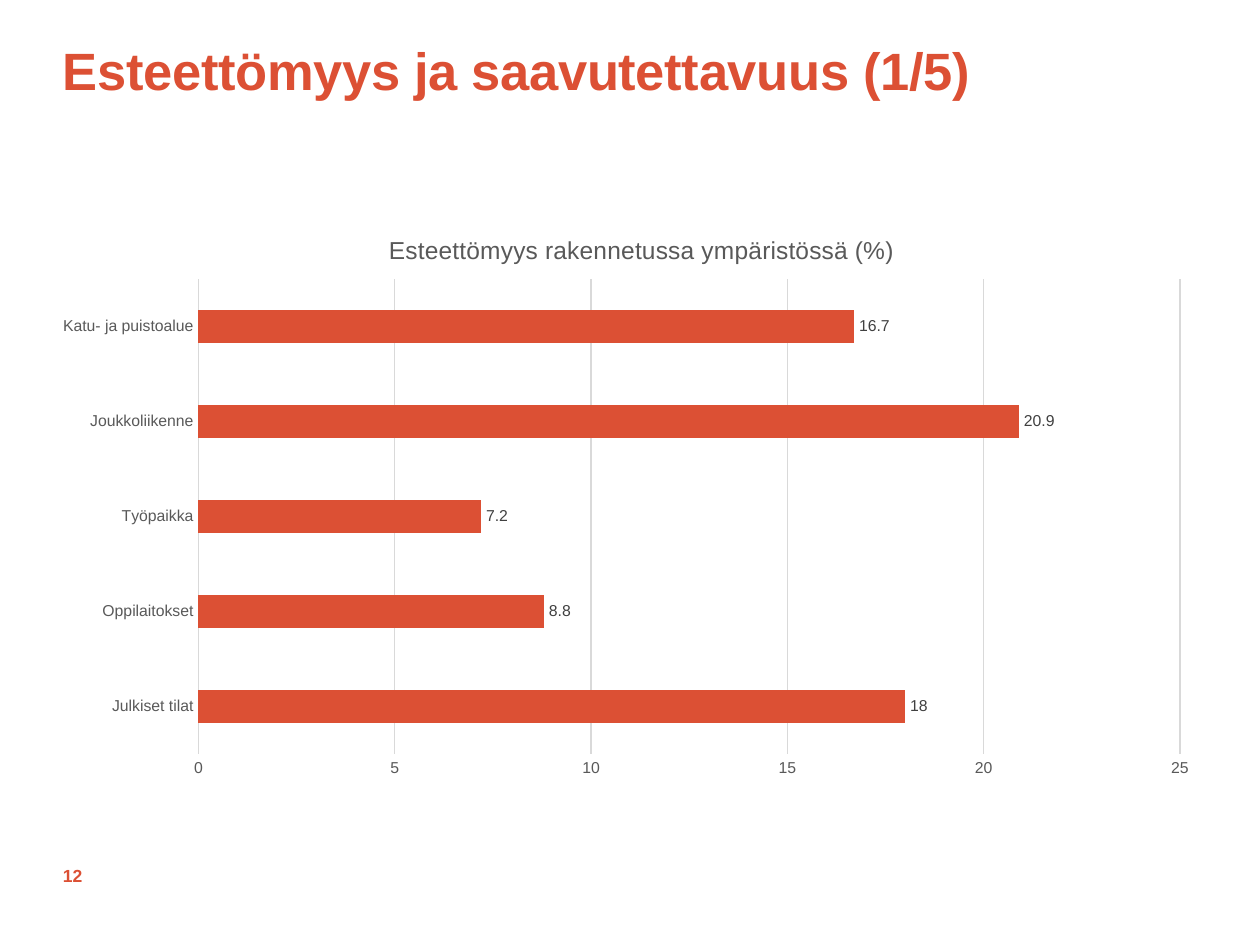
from lxml import etree
from pptx import Presentation
from pptx.chart.data import CategoryChartData
from pptx.dml.color import RGBColor
from pptx.enum.chart import XL_CHART_TYPE, XL_LABEL_POSITION, XL_TICK_MARK
from pptx.enum.text import MSO_ANCHOR
from pptx.oxml.ns import qn
from pptx.util import Emu, Pt

BAR = XL_CHART_TYPE.BAR_CLUSTERED
OUTSIDE_END = XL_LABEL_POSITION.OUTSIDE_END
NO_TICK = XL_TICK_MARK.NONE
MIDDLE = MSO_ANCHOR.MIDDLE

PX = 914400 // 126
ORANGE, GREY, DARK, GRID = "DC5034", "595959", "404040", "D9D9D9"


def style(font, size, color, bold=False):
    font.name = "Arial"
    font.size = Pt(size)
    font.bold = bold
    font.color.rgb = RGBColor.from_string(color)


def place(part, index, **values):
    """Give a chart part a manual layout, in fractions of the chart."""
    for old in part.findall(qn("c:layout")):
        part.remove(old)
    layout = etree.Element(qn("c:layout"))
    manual = etree.SubElement(layout, qn("c:manualLayout"))
    for name, value in values.items():
        etree.SubElement(manual, qn(f"c:{name}")).set("val", str(value))
    part.insert(index, layout)


deck = Presentation()
deck.slide_width, deck.slide_height = Emu(1260 * PX), Emu(945 * PX)
page = deck.slides.add_slide(deck.slide_layouts[6])

# Heading and page number
for text, top, width, height, size in (
    ("Esteettömyys ja saavutettavuus (1/5)", 38, 1134, 146, 30),
    ("12", 851, 89, 50, 10),
):
    box = page.shapes.add_textbox(63 * PX, top * PX, width * PX, height * PX)
    frame = box.text_frame
    frame.word_wrap = True
    frame.margin_left = frame.margin_right = 0
    frame.margin_top = frame.margin_bottom = 0
    para = frame.paragraphs[0]
    span = para.add_run()
    span.text = text
    style(para.font, size, ORANGE, bold=True)
    if size == 30:
        span._r.get_or_add_rPr().set("spc", "-20")
    else:
        frame.vertical_anchor = MIDDLE

# Bar chart
data = CategoryChartData()
data.categories = ["Julkiset tilat", "Oppilaitokset", "Työpaikka",
                   "Joukkoliikenne", "Katu- ja puistoalue"]
data.add_series("Series 1", [18, 8.8, 7.2, 20.9, 16.7])
chart = page.shapes.add_chart(BAR, 63 * PX, 207 * PX, 1148 * PX, 582 * PX, data).chart
style(chart.font, 10, "000000")
chart.has_legend = False

chart.has_title = True
title = chart.chart_title
para = title.text_frame.paragraphs[0]
para.text = "Esteettömyys rakennetussa ympäristössä (%)"
style(para.font, 14, GREY)
place(title._element, 1, xMode="edge", yMode="edge", x=0.28, y=0.04)
place(chart._chartSpace.chart.plotArea, 0, layoutTarget="inner",
      xMode="edge", yMode="edge", x=0.118, y=0.124, w=0.855, h=0.816)

for axis in (chart.category_axis, chart.value_axis):
    axis.major_tick_mark = axis.minor_tick_mark = NO_TICK
    style(axis.tick_labels.font, 9, GREY)

values = chart.value_axis
values.minimum_scale, values.maximum_scale, values.major_unit = 0, 25, 5
values.format.line.fill.background()
values.has_major_gridlines = True
chart.category_axis.has_major_gridlines = False
for line in (chart.category_axis.format.line, values.major_gridlines.format.line):
    line.color.rgb = RGBColor.from_string(GRID)
    line.width = Pt(0.75)

plot = chart.plots[0]
plot.gap_width = 182
plot.vary_by_categories = False
bars = plot.series[0]
bars.format.fill.solid()
bars.format.fill.fore_color.rgb = RGBColor.from_string(ORANGE)
labels = bars.data_labels
labels.show_value = True
labels.position = OUTSIDE_END
style(labels.font, 9, DARK)

deck.save("out.pptx")
